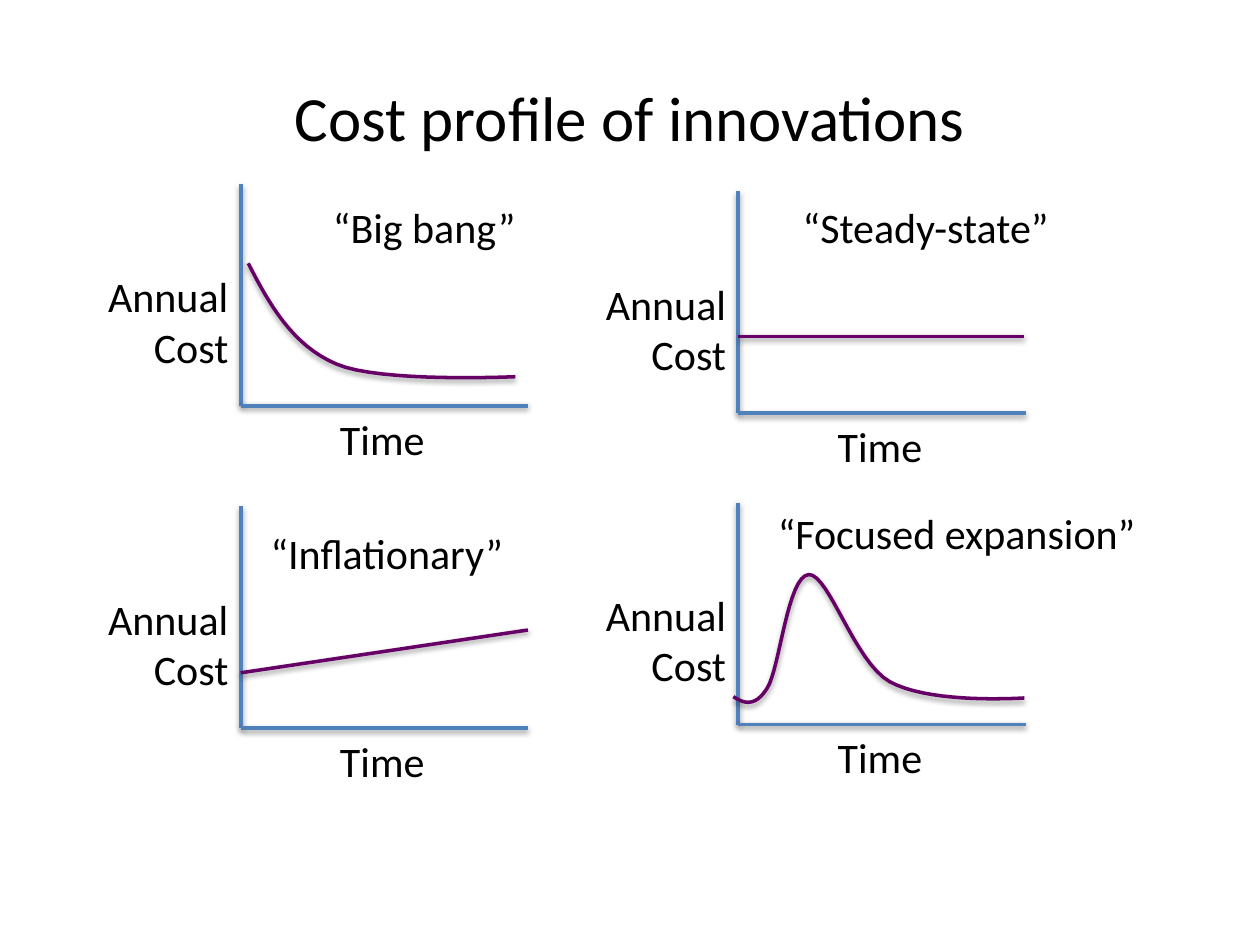
from pptx import Presentation
from pptx.dml.color import RGBColor
from pptx.enum.shapes import MSO_CONNECTOR
from pptx.enum.text import MSO_ANCHOR, MSO_AUTO_SIZE, PP_ALIGN
from pptx.oxml import parse_xml
from pptx.util import Inches, Pt

STRAIGHT = MSO_CONNECTOR.STRAIGHT
MIDDLE = MSO_ANCHOR.MIDDLE
FIT_SHAPE = MSO_AUTO_SIZE.SHAPE_TO_FIT_TEXT
LEFT, CENTER, RIGHT = PP_ALIGN.LEFT, PP_ALIGN.CENTER, PP_ALIGN.RIGHT

COLORS = {"text": "000000", "axis": "4F81BD", "cost": "660066"}
FONT = "Calibri"
AXIS_WIDTH, AXIS_HEIGHT = 2.28, 1.76
CURVE_STEPS = 16

SHADOW = (
    '<a:effectLst xmlns:a="http://schemas.openxmlformats.org/drawingml/2006/main">'
    '<a:outerShdw blurRad="40000" dist="20000" dir="5400000" rotWithShape="0">'
    '<a:srgbClr val="000000"><a:alpha val="38000"/></a:srgbClr>'
    "</a:outerShdw></a:effectLst>"
)


def bezier_points(start, segments):
    """Points along a chain of cubic segments, each (control, control, end)."""
    points = []
    for first, second, end in segments:
        for step in range(1, CURVE_STEPS + 1):
            t = step / CURVE_STEPS
            u = 1 - t
            points.append(tuple(
                u**3 * a + 3 * u * u * t * b + 3 * u * t * t * c + t**3 * d
                for a, b, c, d in zip(start, first, second, end)
            ))
        start = end
    return points


class CostSlide:
    def __init__(self, presentation):
        self.slide = presentation.slides.add_slide(presentation.slide_layouts[5])
        self.shapes = self.slide.shapes

    def add_text(self, paragraph, text, size, align):
        paragraph.alignment = align
        run = paragraph.add_run()
        run.text = text
        run.font.name = FONT
        run.font.size = Pt(size)
        run.font.color.rgb = RGBColor.from_string(COLORS["text"])

    def title(self, text, left, top, width, height):
        shape = self.shapes.title
        shape.left, shape.top = Inches(left), Inches(top)
        shape.width, shape.height = Inches(width), Inches(height)
        shape.text_frame.vertical_anchor = MIDDLE
        self.add_text(shape.text_frame.paragraphs[0], text, 36, CENTER)

    def label(self, lines, left, top, width, height, align, shapes=None):
        box = (shapes or self.shapes).add_textbox(
            Inches(left), Inches(top), Inches(width), Inches(height))
        frame = box.text_frame
        frame.word_wrap = True
        frame.auto_size = FIT_SHAPE
        for index, text in enumerate(lines):
            paragraph = frame.add_paragraph() if index else frame.paragraphs[0]
            self.add_text(paragraph, text, 24, align)

    def stroke(self, shape, color, width):
        shape.line.color.rgb = RGBColor.from_string(COLORS[color])
        shape.line.width = Pt(width)
        shape.element.spPr.append(parse_xml(SHADOW))

    def line(self, start, end, color, width, shapes=None):
        # An empty group is falsy, so compare with None
        container = self.shapes if shapes is None else shapes
        connector = container.add_connector(
            STRAIGHT, *(Inches(value) for value in (*start, *end)))
        self.stroke(connector, color, width)

    def curve(self, start, segments):
        builder = self.shapes.build_freeform(Inches(start[0]), Inches(start[1]))
        builder.add_line_segments(
            [(Inches(x), Inches(y)) for x, y in bezier_points(start, segments)],
            close=False)
        shape = builder.convert_to_shape()
        shape.fill.background()
        self.stroke(shape, "cost", 2)

    def axes(self, x, y, cost_lines):
        """Grouped axes with their labels; (x, y) is where the axes meet."""
        shapes = self.shapes.add_group_shape().shapes
        self.line((x, y - AXIS_HEIGHT), (x, y), "axis", 2.25, shapes)
        self.line((x + AXIS_WIDTH, y), (x, y), "axis", 2.25, shapes)
        self.label(cost_lines, x - 1.32, y - 1.12, 1.32, 0.91, RIGHT, shapes)
        self.label(["Time"], x + 0.69, y + 0.01, 1.1, 0.51, LEFT, shapes)


def main():
    presentation = Presentation()
    presentation.slide_width, presentation.slide_height = Inches(10), Inches(7.5)
    slide = CostSlide(presentation)
    slide.title("Cost profile of innovations", 0.5, 0.3, 9, 1.25)

    # Axes of the four profiles
    for x, y, cost_lines in [
        (1.91, 3.22, ["Annual Cost"]),
        (5.86, 3.28, ["Annual", "Cost"]),
        (1.91, 5.78, ["Annual Cost"]),
        (5.86, 5.75, ["Annual Cost"]),
    ]:
        slide.axes(x, y, cost_lines)

    # Cost over time
    slide.curve((1.97, 2.09), [
        ((2.14, 2.42), (2.32, 2.74), (2.67, 2.89)),
        ((3.02, 3.04), (4.09, 2.99), (4.09, 2.99)),
    ])
    slide.line((5.86, 2.67), (8.13, 2.67), "cost", 2)
    slide.line((1.91, 5.34), (4.19, 5), "cost", 2)
    slide.curve((5.82, 5.53), [
        ((5.9, 5.58), (5.99, 5.62), (6.09, 5.46)),
        ((6.19, 5.3), (6.25, 4.57), (6.42, 4.56)),
        ((6.58, 4.56), (6.78, 5.25), (7.06, 5.41)),
        ((7.35, 5.57), (7.95, 5.55), (8.13, 5.54)),
    ])

    # Profile names
    for name, left, top, width in [
        ("“Big bang”", 2.28, 1.55, 1.91),
        ("“Steady-state”", 5.74, 1.55, 2.68),
        ("“Inflationary”", 2.03, 4.14, 2.06),
        ("“Focused expansion”", 5.93, 3.98, 3.18),
    ]:
        slide.label([name], left, top, width, 0.51, RIGHT)

    presentation.save("out.pptx")


if __name__ == "__main__":
    main()
